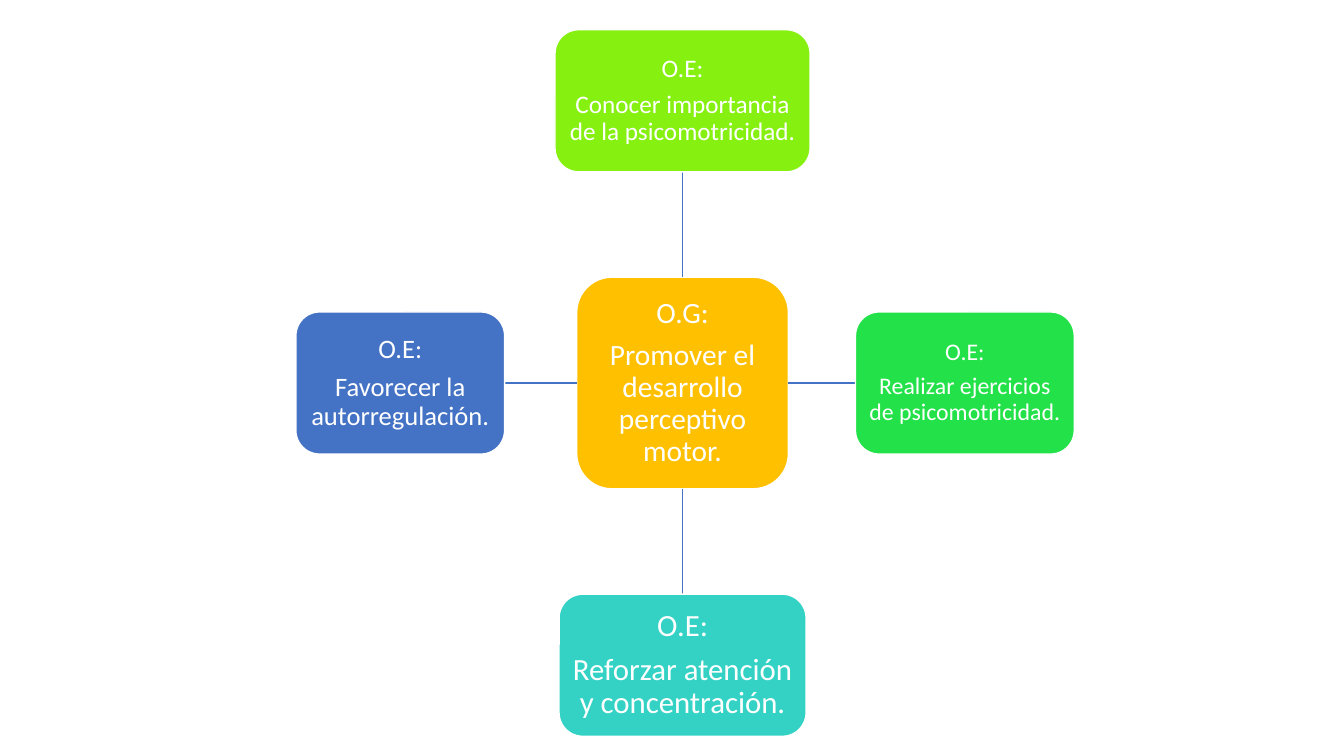
from dataclasses import dataclass

from lxml.etree import SubElement
from pptx import Presentation
from pptx.dml.color import RGBColor
from pptx.enum.shapes import MSO_CONNECTOR, MSO_SHAPE
from pptx.enum.text import MSO_ANCHOR, PP_ALIGN
from pptx.oxml.ns import qn
from pptx.shapes.autoshape import Shape
from pptx.shapes.connector import Connector
from pptx.shapes.shapetree import SlideShapes
from pptx.util import Inches, Pt


@dataclass(frozen=True)
class Theme:
    font: str = "Calibri"
    white: str = "FFFFFF"
    blue: str = "4472C4"
    amber: str = "FFC000"
    lime: str = "86F011"
    green: str = "23E148"
    turquoise: str = "33D2C5"
    general_size: int = 21
    top_size: int = 18
    right_size: int = 17
    bottom_size: int = 22
    left_size: int = 19
    line_width: int = 1
    line_spacing: float = 0.9
    space_after: float = 0.35


@dataclass(frozen=True)
class Objective:
    heading: str
    goal: str
    direction: tuple[int, int]
    width: float
    height: float
    fill: str
    size: int
    inset: float = 0.05
    sites: tuple[int, int] = (0, 0)


THEME = Theme()
CENTER_X, CENTER_Y, ORBIT = 6.77, 3.8, 2.8
TOP, LEFT, BOTTOM, RIGHT = range(4)

GENERAL = Objective("O.G:", "Promover el desarrollo perceptivo motor.",
                    (0, 0), 2.1, 2.1, THEME.amber, THEME.general_size, 0.06)
SPECIFIC = (
    Objective("O.E:", "Conocer importancia de la psicomotricidad.",
              (0, -1), 2.53, 1.41, THEME.lime, THEME.top_size, sites=(TOP, BOTTOM)),
    Objective("O.E:", "Realizar ejercicios de psicomotricidad.",
              (1, 0), 2.17, 1.41, THEME.green, THEME.right_size, sites=(RIGHT, LEFT)),
    Objective("O.E:", "Reforzar atención y concentración.",
              (0, 1), 2.45, 1.41, THEME.turquoise, THEME.bottom_size, 0.06, (BOTTOM, TOP)),
    Objective("O.E:", "Favorecer la autorregulación.",
              (-1, 0), 2.07, 1.41, THEME.blue, THEME.left_size, sites=(LEFT, RIGHT)),
)


def apply_format(target: object, values: dict[str, object]) -> None:
    """Set every named format value on the target."""
    for name, value in values.items():
        setattr(target, name, value)


def draw_objective(shapes: SlideShapes, objective: Objective) -> Shape:
    """Draw one rounded box, centred on its place around the general objective."""
    across, down = objective.direction
    box = shapes.add_shape(
        MSO_SHAPE.ROUNDED_RECTANGLE,
        Inches(CENTER_X + across * ORBIT - objective.width / 2),
        Inches(CENTER_Y + down * ORBIT - objective.height / 2),
        Inches(objective.width), Inches(objective.height))
    box.shadow.inherit = False
    box.fill.solid()
    box.fill.fore_color.rgb = RGBColor.from_string(objective.fill)
    box.line.color.rgb = RGBColor.from_string(THEME.white)
    box.line.width = Pt(THEME.line_width)

    inset = Inches(objective.inset)
    apply_format(box.text_frame, {
        "text": f"{objective.heading}\n{objective.goal}",
        "word_wrap": True, "vertical_anchor": MSO_ANCHOR.MIDDLE,
        "margin_left": inset, "margin_right": inset,
        "margin_top": inset, "margin_bottom": inset})
    for paragraph in box.text_frame.paragraphs:
        apply_format(paragraph, {
            "alignment": PP_ALIGN.CENTER, "line_spacing": THEME.line_spacing,
            "space_after": Pt(objective.size * THEME.space_after)})
        for run in paragraph.runs:
            apply_format(run.font, {"name": THEME.font, "size": Pt(objective.size)})
            run.font.color.rgb = RGBColor.from_string(THEME.white)
    return box


def draw_spoke(shapes: SlideShapes) -> Connector:
    """Draw a plain line, ready to be attached to two boxes."""
    center = Inches(CENTER_X), Inches(CENTER_Y)
    spoke = shapes.add_connector(MSO_CONNECTOR.STRAIGHT, *center, *center)
    spoke.line.color.rgb = RGBColor.from_string(THEME.blue)
    spoke.line.width = Pt(THEME.line_width)
    SubElement(spoke._element.spPr, qn("a:effectLst"))
    return spoke


def main() -> None:
    """Build the slide of general and specific objectives."""
    presentation = Presentation()
    apply_format(presentation, {"slide_width": Inches(13.33), "slide_height": Inches(7.5)})
    shapes = presentation.slides.add_slide(presentation.slide_layouts[6]).shapes
    general = draw_objective(shapes, GENERAL)
    for objective in SPECIFIC:
        spoke = draw_spoke(shapes)
        specific = draw_objective(shapes, objective)
        general_site, specific_site = objective.sites
        spoke.begin_connect(general, general_site)
        spoke.end_connect(specific, specific_site)
    presentation.save("out.pptx")


if __name__ == "__main__":
    main()
